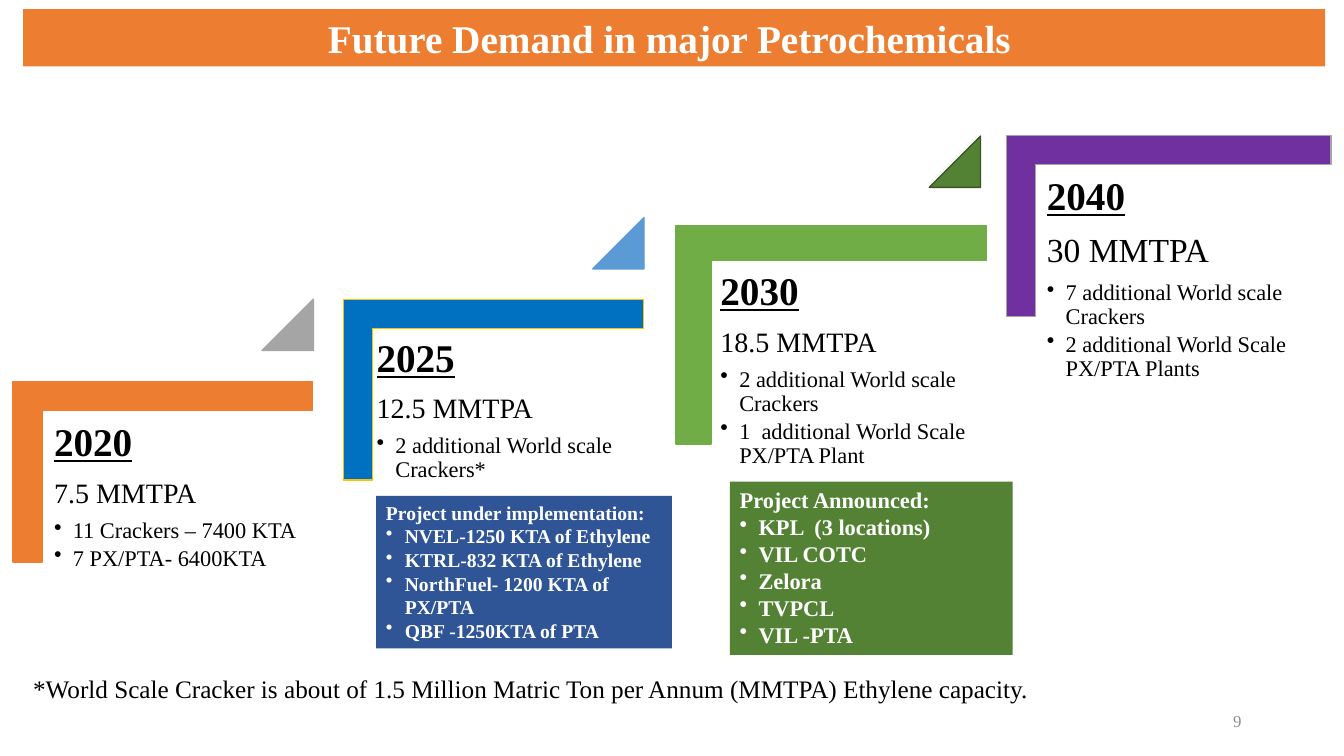
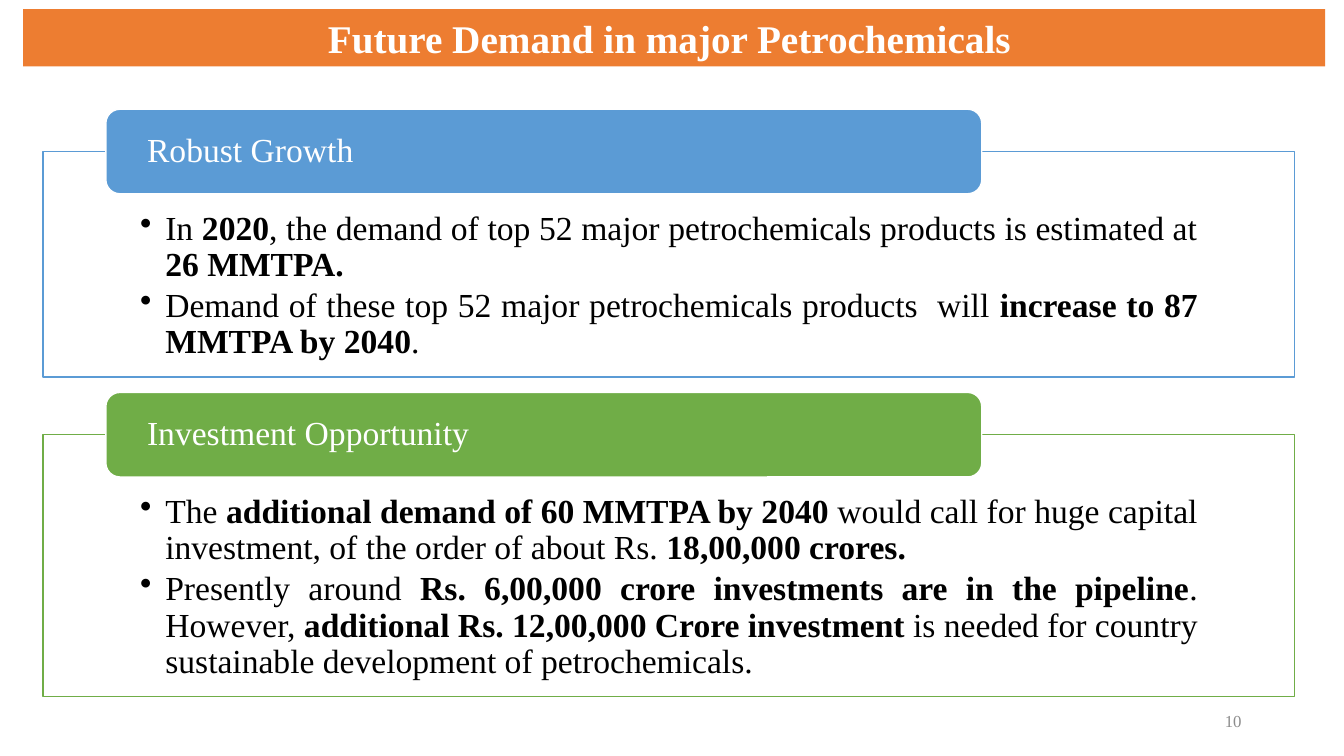
"""Build two slides on the future demand in major petrochemicals."""
from dataclasses import dataclass

from lxml.etree import SubElement
from pptx import Presentation
from pptx.dml.color import RGBColor
from pptx.enum.shapes import MSO_SHAPE as Preset
from pptx.enum.text import MSO_ANCHOR as Anchor, PP_ALIGN as Align
from pptx.oxml.ns import qn
from pptx.util import Pt


@dataclass(frozen=True)
class Theme:
    font: str = "Times New Roman"
    black: str = "000000"
    white: str = "FFFFFF"
    muted: str = "8C8C8C"
    orange: str = "ED7D31"
    grey: str = "A5A5A5"
    gold: str = "FFC000"
    sky: str = "5B9BD5"
    blue: str = "0070C0"
    navy: str = "2F5597"
    green: str = "70AD47"
    forest: str = "548235"
    pine: str = "385723"
    purple: str = "7030A0"
    title: float = 28
    heading: float = 24
    amount: float = 20
    note: float = 18
    body: float = 16
    small: float = 14
    number: float = 12


THEME = Theme()


@dataclass(frozen=True)
class Box:
    left: float
    top: float
    width: float
    height: float


@dataclass(frozen=True)
class Line:
    text: str
    size: float
    color: str = THEME.black
    bold: bool = False
    underline: bool = False
    indent: float = 0
    align: Align = Align.LEFT
    spacing: float = 1.0
    after: float = 0


@dataclass(frozen=True)
class Step:
    year: str
    amount: str
    points: tuple[str, ...]
    corner: Box
    fill: str
    edge: str
    label: Box
    amount_size: float = THEME.amount


@dataclass(frozen=True)
class Marker:
    left: float
    top: float
    fill: str
    edge: str


@dataclass(frozen=True)
class Projects:
    heading: str
    names: tuple[str, ...]
    box: Box
    fill: str
    size: float


@dataclass(frozen=True)
class Panel:
    heading: str
    points: tuple[str, ...]
    top: float
    height: float
    color: str


TITLE = "Future Demand in major Petrochemicals "
FOOTNOTE = ("*World Scale Cracker is about of 1.5 Million Matric Ton per Annum "
            "(MMTPA) Ethylene capacity.")
STEPS = (
    Step("2020", "7.5 MMTPA", ("11 Crackers – 7400 KTA", "7 PX/PTA- 6400KTA"),
         Box(9.2, 272.3, 214, 129), THEME.orange, THEME.orange,
         Box(30.2, 293.8, 193.7, 169.2)),
    Step("2025", "12.5 MMTPA", ("2 additional World scale Crackers*",),
         Box(245.5, 214, 214, 129), THEME.blue, THEME.gold,
         Box(260.6, 233.3, 232.6, 169.2)),
    Step("2030", "18.5 MMTPA",
         ("2 additional World scale Crackers",
          "1  additional World Scale PX/PTA Plant"),
         Box(482.8, 160.9, 221.8, 156.2), THEME.green, THEME.green,
         Box(506.2, 185.8, 208.8, 169.2)),
    Step("2040", "30 MMTPA",
         ("7 additional World scale Crackers",
          "2 additional World Scale PX/PTA Plants"),
         Box(718.9, 97, 231.8, 129), THEME.purple, THEME.grey,
         Box(739.4, 118.1, 213.1, 169.2), THEME.heading),
)
MARKERS = (
    Marker(187.2, 213.8, THEME.grey, THEME.grey),
    Marker(423.4, 155.5, THEME.sky, THEME.sky),
    Marker(663.8, 97.2, THEME.forest, THEME.pine),
)
PROJECTS = (
    Projects("Project under implementation:",
             ("NVEL-1250 KTA of Ethylene", "KTRL-832 KTA of Ethylene",
              "NorthFuel- 1200 KTA of PX/PTA", "QBF -1250KTA of PTA"),
             Box(268.6, 354.2, 211.4, 109), THEME.navy, THEME.small),
    Projects("Project Announced:",
             ("KPL  (3 locations)", "VIL COTC", "Zelora", "TVPCL", "VIL -PTA"),
             Box(521.3, 344, 202, 123.8), THEME.forest, THEME.body),
)
PANELS = (
    Panel("Robust Growth",
          ("In **2020**, the demand of top 52 major petrochemicals products is "
           "estimated at **26 MMTPA.**",
           "Demand of these top 52 major petrochemicals products  will "
           "**increase to 87 MMTPA by 2040**."),
          108.2, 161.2, THEME.sky),
    Panel("Investment Opportunity",
          ("The **additional demand of 60 MMTPA by 2040 **would call for huge "
           "capital investment, of the order of about Rs. **18,00,000 crores.**",
           "Presently around **Rs. 6,00,000 crore investments are in the "
           "pipeline**. However, **additional Rs. 12,00,000 Crore investment** "
           "is needed for country sustainable development of petrochemicals."),
          310.5, 187.2, THEME.green),
)


def place(box: Box) -> tuple:
    """Return the box as four lengths."""
    return Pt(box.left), Pt(box.top), Pt(box.width), Pt(box.height)


def add_block(page, preset: Preset, box: Box, fill: str, edge: str | None = None):
    """Draw a filled preset shape with an optional one-point edge."""
    block = page.shapes.add_shape(preset, *place(box))
    block.shadow.inherit = False
    block.fill.solid()
    block.fill.fore_color.rgb = RGBColor.from_string(fill)
    if edge:
        block.line.color.rgb = RGBColor.from_string(edge)
        block.line.width = Pt(1)
    else:
        block.line.fill.background()
    return block


def add_bullet(paragraph, indent: float) -> None:
    """Give a paragraph a bullet with a hanging indent."""
    properties = paragraph._p.get_or_add_pPr()
    properties.set("marL", str(Pt(indent)))
    properties.set("indent", str(-Pt(indent)))
    SubElement(properties, qn("a:buChar")).set("char", "•")


def write(shape, lines: list[Line], insets: tuple = (7.2, 3.6, 7.2, 3.6),
          anchor: Anchor = Anchor.TOP) -> None:
    """Fill a shape with lines, where ** switches bold on and off."""
    frame = shape.text_frame
    frame.word_wrap = True
    frame.vertical_anchor = anchor
    (frame.margin_left, frame.margin_top,
     frame.margin_right, frame.margin_bottom) = map(Pt, insets)
    for index, line in enumerate(lines):
        para = frame.add_paragraph() if index else frame.paragraphs[0]
        para.alignment = line.align
        para.line_spacing = line.spacing
        para.space_after = Pt(round(line.size * line.after, 2))
        if line.indent:
            add_bullet(para, line.indent)
        para.font.name = THEME.font
        para.font.size = Pt(line.size)
        para.font.color.rgb = RGBColor.from_string(line.color)
        para.font.bold = line.bold
        para.font.underline = line.underline
        for part, text in enumerate(line.text.split("**")):
            if text:
                span = para.add_run()
                span.text = text
                if part % 2:
                    span.font.bold = True


def add_text(page, box: Box, lines: list[Line], **layout) -> None:
    """Add a text box holding the lines."""
    write(page.shapes.add_textbox(*place(box)), lines, **layout)


def add_page(deck, number: int):
    """Add a blank page with the title band and page number."""
    page = deck.slides.add_slide(deck.slide_layouts[6])
    band = add_block(page, Preset.RECTANGLE, Box(16.6, 6.5, 930, 41), THEME.orange)
    write(band, [Line(TITLE, THEME.title, THEME.white, bold=True,
                      align=Align.CENTER)])
    add_text(page, Box(678, 500.5, 216, 28.8),
             [Line(str(number), THEME.number, THEME.muted, align=Align.RIGHT)],
             anchor=Anchor.MIDDLE)
    return page


def add_step(page, step: Step) -> None:
    """Draw one stair corner with its year, amount and points."""
    box = step.corner
    shift = (box.width - box.height) / 2
    turned = Box(box.left + shift, box.top - shift, box.height, box.width)
    corner = add_block(page, Preset.CORNER, turned, step.fill, step.edge)
    corner.rotation = 90
    corner.adjustments[0] = corner.adjustments[1] = 0.16
    lines = [Line(step.year, THEME.title, bold=True, underline=True,
                  spacing=0.9, after=0.35),
             Line(step.amount, step.amount_size, spacing=0.9, after=0.35)]
    lines += [Line(point, THEME.body, indent=13.5, spacing=0.9, after=0.15)
              for point in step.points]
    add_text(page, step.label, lines, insets=(8.4,) * 4)


def add_marker(page, marker: Marker) -> None:
    """Draw the right-angled triangle between two steps."""
    box = Box(marker.left, marker.top, 36.6, 36.6)
    triangle = add_block(page, Preset.ISOSCELES_TRIANGLE, box,
                         marker.fill, marker.edge)
    triangle.adjustments[0] = 1


def add_projects(page, projects: Projects) -> None:
    """Draw a filled box listing projects."""
    block = add_block(page, Preset.RECTANGLE, projects.box, projects.fill)
    lines = [Line(projects.heading, projects.size, THEME.white, bold=True)]
    lines += [Line(name, projects.size, THEME.white, bold=True, indent=13.5)
              for name in projects.names]
    write(block, lines)


def add_panel(page, panel: Panel) -> None:
    """Draw an outlined panel with a rounded heading over its top edge."""
    frame = add_block(page, Preset.RECTANGLE,
                      Box(30.7, panel.top, 894.2, panel.height),
                      THEME.white, panel.color)
    write(frame, [Line(point, THEME.heading, indent=18, align=Align.JUSTIFY,
                       spacing=0.9, after=0.15) for point in panel.points],
          insets=(69.4, 42.5, 69.4, 13.7))
    heading = add_block(page, Preset.ROUNDED_RECTANGLE,
                        Box(75.6, panel.top - 30.2, 625.7, 60.4),
                        panel.color, THEME.white)
    write(heading, [Line(panel.heading, THEME.heading, THEME.white, spacing=0.9)],
          insets=(26.5, 0, 26.5, 0), anchor=Anchor.MIDDLE)


def main() -> None:
    """Build the deck and save it."""
    deck = Presentation()
    deck.slide_width, deck.slide_height = Pt(960), Pt(540)

    stairs = add_page(deck, 9)
    for step in STEPS:
        add_step(stairs, step)
    for marker in MARKERS:
        add_marker(stairs, marker)
    for projects in PROJECTS:
        add_projects(stairs, projects)
    add_text(stairs, Box(16.6, 477.4, 836, 28.8), [Line(FOOTNOTE, THEME.note)])

    outlook = add_page(deck, 10)
    for panel in PANELS:
        add_panel(outlook, panel)

    deck.save("out.pptx")


if __name__ == "__main__":
    main()
